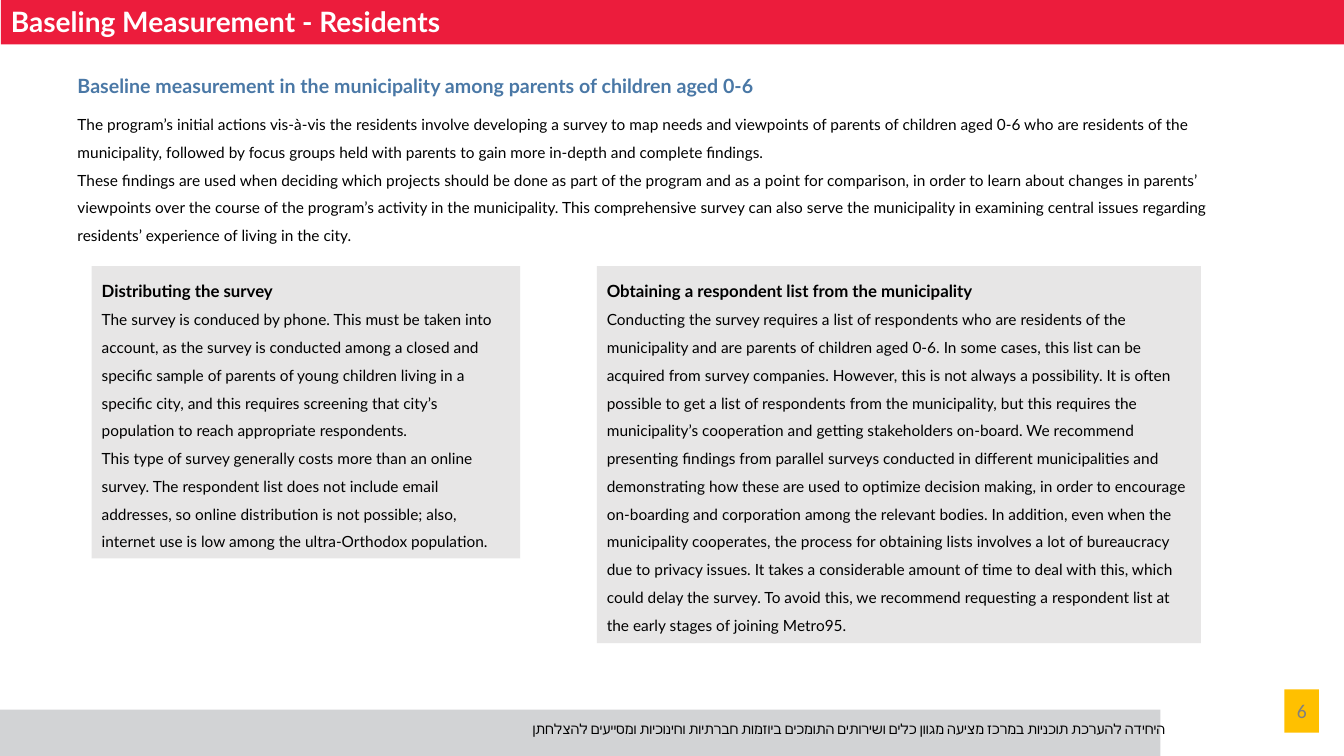
import pptx
import pptx.util
import pptx.dml.color
import pptx.enum.shapes
import pptx.enum.text
import pptx.oxml.ns
import lxml.etree

Inches = pptx.util.Inches
Align = pptx.enum.text.PP_ALIGN
Anchor = pptx.enum.text.MSO_ANCHOR

deck = pptx.Presentation()
deck.slide_width = Inches(13.33)
deck.slide_height = Inches(7.5)
slide = deck.slides.add_slide(deck.slide_layouts[6])


def add_box(left, top, width, height, fill=None):
    """Add a filled rectangle, or a plain text box if no fill is given."""
    place = [Inches(n) for n in (left, top, width, height)]
    if fill:
        box = slide.shapes.add_shape(pptx.enum.shapes.MSO_SHAPE.RECTANGLE, *place)
        box.shadow.inherit = False
        box.fill.solid()
        box.fill.fore_color.rgb = pptx.dml.color.RGBColor.from_string(fill)
        box.line.fill.background()
    else:
        box = slide.shapes.add_textbox(*place)
    box.text_frame.word_wrap = True
    box.text_frame.vertical_anchor = Anchor.TOP
    return box.text_frame


def add_text(frame, parts, size, color="000000", bold=False, font="Lato",
             align=Align.LEFT, spacing=1.0, after=0):
    """Add one paragraph with a run for each part; a newline part is a line break."""
    para = frame.paragraphs[0]
    if para.runs:
        para = frame.add_paragraph()
    para.alignment = align
    para.line_spacing = spacing
    para.space_after = pptx.util.Pt(after)
    for part in parts:
        if part == "\n":
            para.add_line_break()
            continue
        run = para.add_run()
        run.text = part
        run.font.size = pptx.util.Pt(size)
        run.font.bold = bold
        run.font.name = font
        run.font.color.rgb = pptx.dml.color.RGBColor.from_string(color)
        script = lxml.etree.SubElement(run.font._element, pptx.oxml.ns.qn("a:cs"))
        script.set("typeface", font)


# Footer
add_box(0, 7.04, 11.51, 0.46, "D2D3D5")
add_box(12.74, 6.84, 0.34, 0.43, "FFC000")
footer = add_box(4.49, 7.1, 7.17, 0.27)
add_text(footer, ["היחידה להערכת תוכניות במרכז מציעה מגוון כלים ושירותים התומכים ביוזמות חברתיות וחינוכיות ומסייעים להצלחתן"],
         10, font="Calibri", align=Align.RIGHT)
number = add_box(12.36, 6.85, 0.7, 0.4)
number.vertical_anchor = Anchor.MIDDLE
add_text(number, ["6"], 14, "808080", font="Calibri", align=Align.RIGHT)

# Title
title = add_box(0.01, 0, 13.32, 0.44, "EC1C3C")
add_text(title, ["Baseling Measurement - Residents"], 20, "FFFFFF", True)

# Introduction
intro = add_box(0.67, 0.57, 12.01, 1.93)
add_text(intro, ["Baseline measurement in the municipality among parents of children aged 0-6"],
         14, "4A78A6", True, spacing=1.5, after=6)
add_text(intro, [
    "The program’s initial actions vis-à-vis the residents involve developing a survey to map needs "
    "and viewpoints of parents of children aged 0-6 who are residents of the municipality, followed "
    "by focus groups held with parents to gain more in-depth and complete findings.",
    "\n",
    "These findings are used when deciding which projects should be done as part of the program and "
    "as a point for comparison, in order to learn about changes in parents’ viewpoints over the "
    "course of the program’s activity in the municipality. This comprehensive survey can also serve "
    "the municipality in examining central issues regarding residents’ experience of living in the city.",
], 11, spacing=1.5, after=6)

# Panels: left, width, height, heading, paragraphs as lists of runs
panels = [
    (5.92, 5.99, 3.74, "Obtaining a respondent list from the municipality", [[
        "Conducting the survey requires a list of respondents who are residents of the municipality "
        "and are parents of children aged 0-6. In some cases, this list can be acquired from survey "
        "companies. However, this is not always a possibility. It is often possible to get a list of "
        "respondents from the municipality, but this requires the municipality’s cooperation and "
        "getting stakeholders on-board. ",
        "We recommend presenting findings from parallel surveys "
        "conducted in different municipalities and demonstrating how these are used to optimize "
        "decision making, in order to encourage on-boarding and corporation among the relevant "
        "bodies. In addition, even when the municipality cooperates, the process for obtaining lists "
        "involves a lot of bureaucracy due to privacy issues. It takes a considerable amount of time "
        "to deal with this, which could delay the survey. To avoid this, we recommend requesting a "
        "respondent list at the early stages of joining Metro95.",
    ]]),
    (0.91, 4.25, 2.9, "Distributing the survey", [[
        "The survey is conduced by phone. This must be taken into account, as the survey is conducted "
        "among a closed and specific sample of parents of young children living in a specific city, "
        "and this requires screening that city’s population to reach appropriate respondents.",
    ], [
        "This type of survey generally costs more than an online survey. The respondent list does not "
        "include email addresses, so online distribution is not possible; also, internet use is low "
        "among the ultra-Orthodox population.",
    ]]),
]
for left, width, height, heading, body in panels:
    panel = add_box(left, 2.64, width, height, "E7E6E6")
    add_text(panel, [heading], 12, bold=True, spacing=1.5)
    for parts in body:
        add_text(panel, parts, 11, spacing=1.5)

deck.save("out.pptx")
